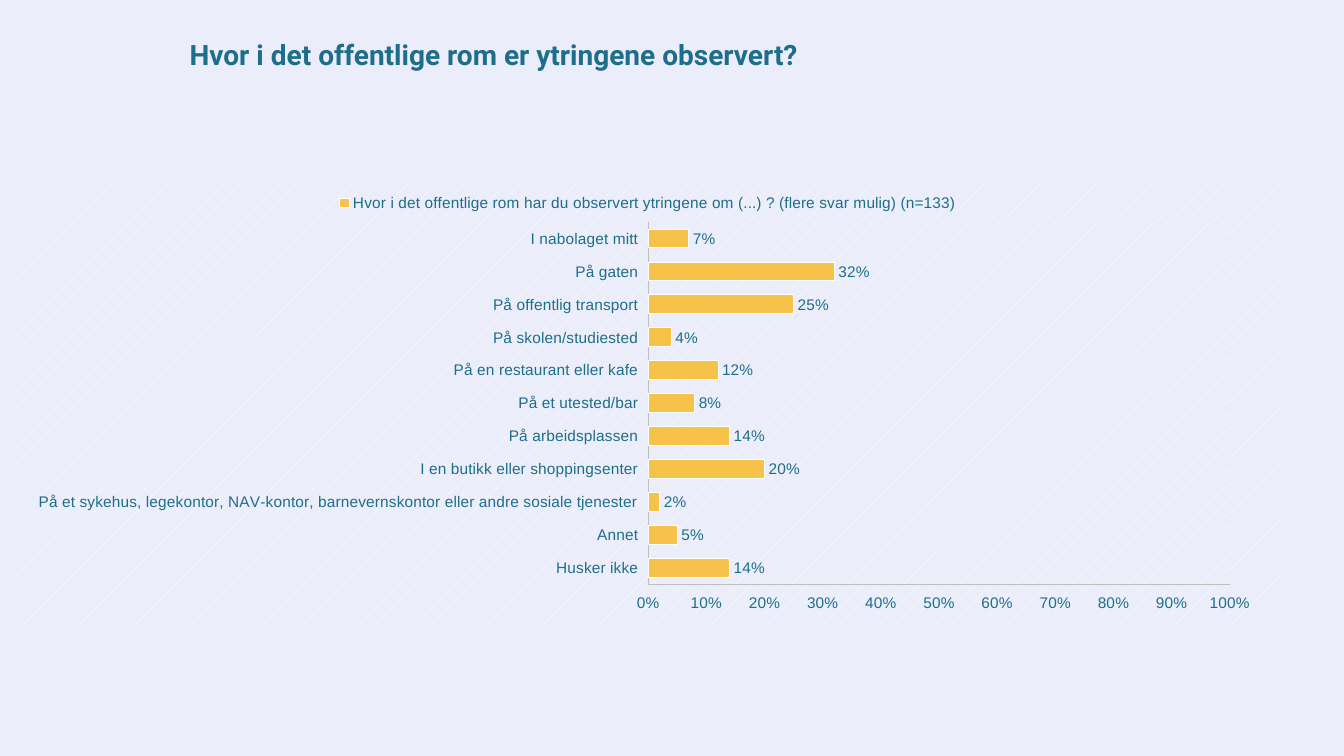
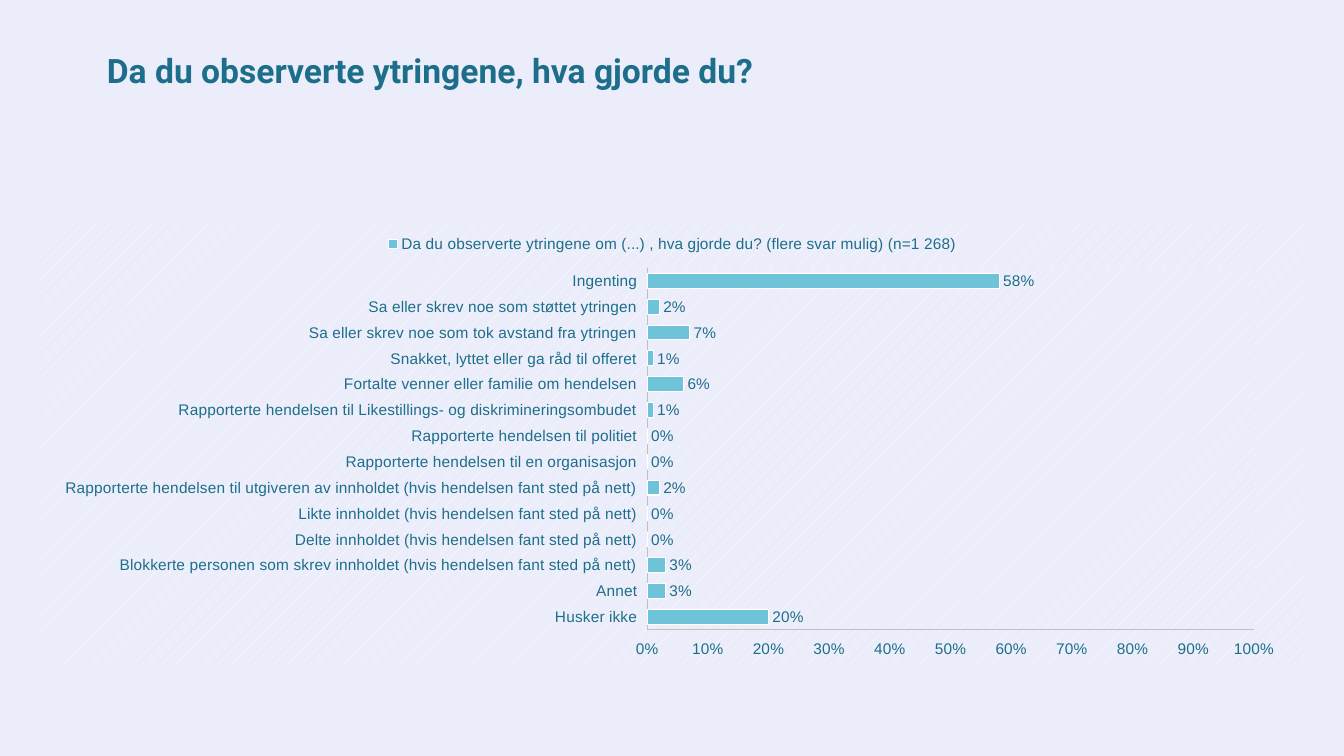
from lxml.etree import SubElement
from pptx import Presentation
from pptx.chart.data import CategoryChartData
from pptx.dml.color import RGBColor
from pptx.enum.chart import (XL_CHART_TYPE, XL_LABEL_POSITION as LabelPos, XL_LEGEND_POSITION as LegendPos,
                             XL_TICK_LABEL_POSITION as TickPos, XL_TICK_MARK as TickMark)
from pptx.enum.text import MSO_ANCHOR, MSO_AUTO_SIZE, PP_ALIGN
from pptx.oxml import parse_xml
from pptx.oxml.ns import nsdecls, qn
from pptx.util import Inches, Pt

COLORS = {"background": "ECEDFA", "text": "1D6E8A", "axis": "BFBFBF", "white": "FFFFFF",
          "yellow": "F6C24A", "blue": "6FC3D9"}
PERCENT = r"General\%"
CHART_SIZE = (12.54, 4.38)
ONLINE = "(hvis hendelsen fant sted på nett)"

PLACES = {
    "title": "Hvor i det offentlige rom er ytringene observert?",
    "title_box": (1.78, 0.32, 8.64, 0.44),
    "title_size": 20,
    "chart_corner": (0.16, 1.81),
    "plot": (0.5, 0.09, 0.46, 0.82),
    "color": "yellow",
    "question": "Hvor i det offentlige rom har du observert ytringene om (...) ? (flere svar mulig) (n=133)",
    "answers": {
        "Husker ikke": 14,
        "Annet": 5,
        "På et sykehus, legekontor, NAV-kontor, barnevernskontor eller andre sosiale tjenester": 2,
        "I en butikk eller shoppingsenter": 20,
        "På arbeidsplassen": 14,
        "På et utested/bar": 8,
        "På en restaurant eller kafe": 12,
        "På skolen/studiested": 4,
        "På offentlig transport": 25,
        "På gaten": 32,
        "I nabolaget mitt": 7,
    },
}

REACTIONS = {
    "title": "Da du observerte ytringene, hva gjorde du?",
    "title_box": (0.96, 0.44, 9.94, 0.5),
    "title_size": 24,
    "chart_corner": (0.4, 2.22),
    "plot": (0.48, 0.1, 0.48, 0.82),
    "color": "blue",
    "question": "Da du observerte ytringene om (...) , hva gjorde du? (flere svar mulig) (n=1 268)",
    "answers": {
        "Husker ikke": 20,
        "Annet": 3,
        f"Blokkerte personen som skrev innholdet {ONLINE}": 3,
        f"Delte innholdet {ONLINE}": 0,
        f"Likte innholdet {ONLINE}": 0,
        f"Rapporterte hendelsen til utgiveren av innholdet {ONLINE}": 2,
        "Rapporterte hendelsen til en organisasjon": 0,
        "Rapporterte hendelsen til politiet": 0,
        "Rapporterte hendelsen til Likestillings- og diskrimineringsombudet": 1,
        "Fortalte venner eller familie om hendelsen": 6,
        "Snakket, lyttet eller ga råd til offeret": 1,
        "Sa eller skrev noe som tok avstand fra ytringen": 7,
        "Sa eller skrev noe som støttet ytringen": 2,
        "Ingenting": 58,
    },
}


def rgb(name):
    """Return the named colour."""
    return RGBColor.from_string(COLORS[name])


def set_font(font, name, size, bold=False):
    """Apply the deck's text colour with the given face and size."""
    font.name, font.size, font.bold = name, Pt(size), bold
    font.color.rgb = rgb("text")


def set_line(line, color):
    """Draw a thin solid line."""
    line.color.rgb = rgb(color)
    line.width = Pt(0.75)


def dotted_fill():
    """Return chart properties with the faint pattern and no outline."""
    return parse_xml(
        f'<c:spPr {nsdecls("c", "a")}><a:pattFill prst="pct5">'
        f'<a:fgClr><a:srgbClr val="{COLORS["white"]}"/></a:fgClr>'
        f'<a:bgClr><a:srgbClr val="{COLORS["background"]}"/></a:bgClr>'
        '</a:pattFill><a:ln><a:noFill/></a:ln></c:spPr>')


def place_plot(plot_area, box):
    """Fix the inner plot area to fractions of the chart."""
    layout = plot_area.find(qn("c:layout"))
    if layout is None:
        layout = plot_area.makeelement(qn("c:layout"))
        plot_area.insert(0, layout)
    manual = SubElement(layout, qn("c:manualLayout"))
    settings = [("layoutTarget", "inner"), ("xMode", "edge"), ("yMode", "edge"), *zip("xywh", box)]
    for tag, value in settings:
        SubElement(manual, qn(f"c:{tag}")).set("val", str(value))


def style_axis(axis):
    """Show an axis as a thin line with labels only."""
    axis.has_major_gridlines = False
    axis.major_tick_mark = axis.minor_tick_mark = TickMark.NONE
    axis.tick_label_position = TickPos.LOW
    set_line(axis.format.line, "axis")


def add_title(slide, text, box, size):
    """Fill the title placeholder in the given box."""
    title = slide.shapes.title
    title.left, title.top, title.width, title.height = map(Inches, box)
    frame = title.text_frame
    frame.text = text
    frame.word_wrap = True
    frame.auto_size = MSO_AUTO_SIZE.NONE
    frame.vertical_anchor = MSO_ANCHOR.MIDDLE
    heading = frame.paragraphs[0]
    heading.alignment = PP_ALIGN.LEFT
    set_font(heading.font, "Roboto", size, bold=True)


def add_answers(slide, survey):
    """Add the bar chart of answer shares."""
    shares = CategoryChartData(number_format=PERCENT)
    shares.categories = list(survey["answers"])
    shares.add_series(survey["question"], list(survey["answers"].values()))
    box = map(Inches, survey["chart_corner"] + CHART_SIZE)
    chart = slide.shapes.add_chart(XL_CHART_TYPE.BAR_CLUSTERED, *box, shares).chart
    set_font(chart.font, "Arial", 11)
    chart.has_title = False
    chart.has_legend = True
    chart.legend.position = LegendPos.TOP
    chart.legend.include_in_layout = False

    style_axis(chart.category_axis)
    scale = chart.value_axis
    style_axis(scale)
    scale.minimum_scale, scale.maximum_scale, scale.major_unit = 0, 100, 10
    scale.tick_labels.number_format = PERCENT
    scale.tick_labels.number_format_is_linked = False

    bars = chart.plots[0]
    bars.gap_width, bars.overlap, bars.vary_by_categories = 75, -83, False
    bars.has_data_labels = True
    labels = bars.data_labels
    labels.show_value = True
    labels.position = LabelPos.OUTSIDE_END
    labels.number_format = PERCENT
    labels.number_format_is_linked = False
    bar_format = bars.series[0].format
    bar_format.fill.solid()
    bar_format.fill.fore_color.rgb = rgb(survey["color"])
    set_line(bar_format.line, "white")

    chart_body = chart.element.find(qn("c:chart"))
    plot_area = chart_body.find(qn("c:plotArea"))
    place_plot(plot_area, survey["plot"])
    plot_area.append(dotted_fill())
    chart_body.addnext(dotted_fill())


def add_survey_slide(deck, survey):
    """Add one question with its title and chart."""
    slide = deck.slides.add_slide(deck.slide_layouts[5])
    add_title(slide, survey["title"], survey["title_box"], survey["title_size"])
    add_answers(slide, survey)


def main():
    """Build and save the deck."""
    deck = Presentation()
    deck.slide_width, deck.slide_height = Inches(13.33), Inches(7.5)
    backdrop = deck.slide_master.background.fill
    backdrop.solid()
    backdrop.fore_color.rgb = rgb("background")
    for survey in (PLACES, REACTIONS):
        add_survey_slide(deck, survey)
    deck.save("out.pptx")


if __name__ == "__main__":
    main()
